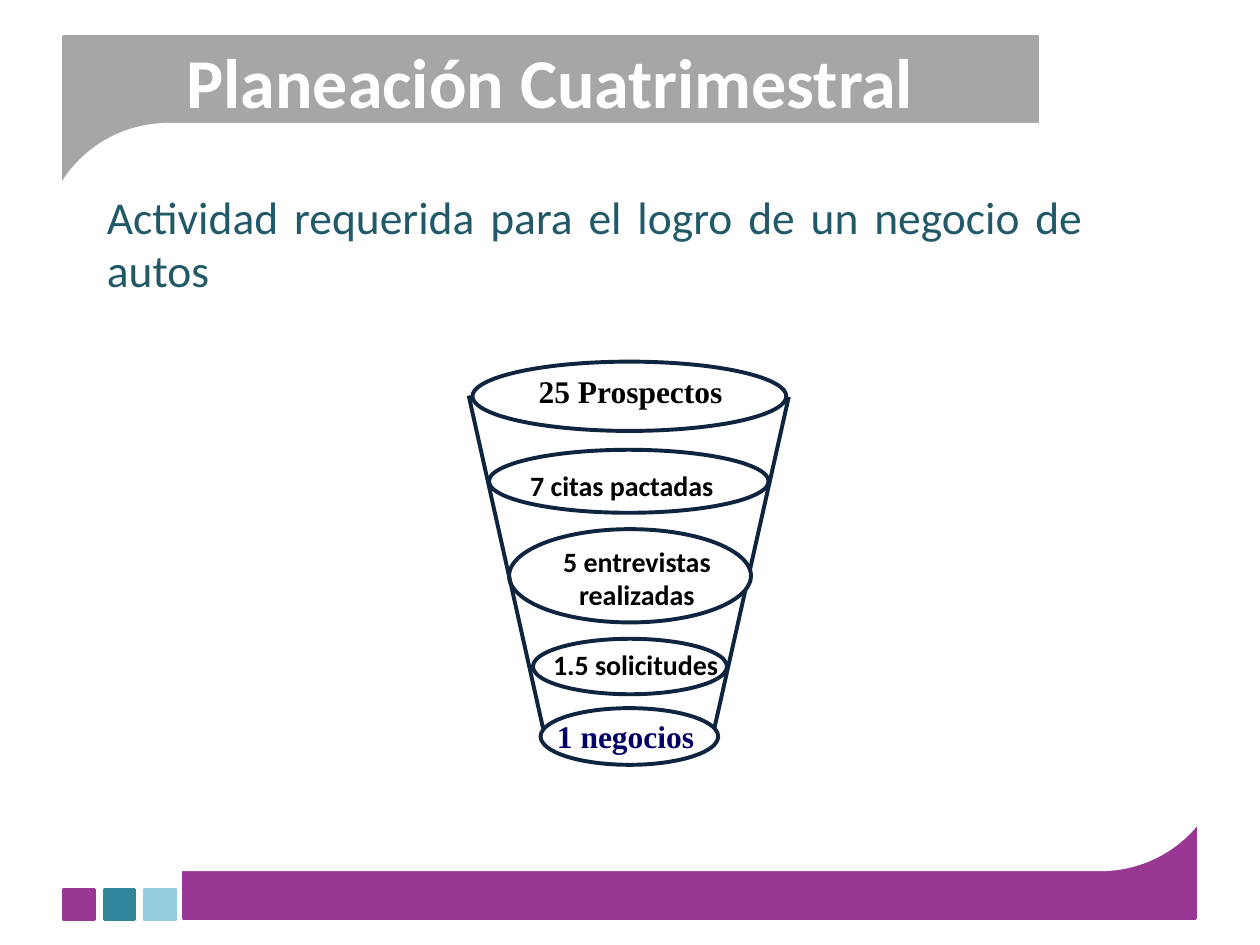
import pptx
import pptx.dml.color
import pptx.enum.shapes
import pptx.enum.text
import pptx.oxml
import pptx.util
from pptx.util import Inches

SHAPE = pptx.enum.shapes.MSO_SHAPE
ALIGN = pptx.enum.text.PP_ALIGN
ANCHOR = pptx.enum.text.MSO_ANCHOR
NAVY, PURPLE, GRAY, WHITE = "0F243E", "993794", "A6A6A6", "FFFFFF"
EFFECTS = ('<a:effectLst xmlns:a='
           '"http://schemas.openxmlformats.org/drawingml/2006/main"/>')


def color(value):
    return pptx.dml.color.RGBColor.from_string(value)


class SlideBuilder:
    def __init__(self, page, font="Calibri"):
        self.page = page
        self.font = font

    def shape(self, kind, left, top, width, height, fill, line=None, weight=2):
        shape = self.page.shapes.add_shape(
            kind, Inches(left), Inches(top), Inches(width), Inches(height))
        shape.shadow.inherit = False
        shape.fill.solid()
        shape.fill.fore_color.rgb = color(fill)
        shape.line.color.rgb = color(line or fill)
        shape.line.width = pptx.util.Pt(weight)
        return shape

    def ring(self, left, top, width, height):
        return self.shape(SHAPE.OVAL, left, top, width, height, WHITE, NAVY, 2.25)

    def line(self, x1, y1, x2, y2):
        line = self.page.shapes.add_connector(
            pptx.enum.shapes.MSO_CONNECTOR.STRAIGHT,
            Inches(x1), Inches(y1), Inches(x2), Inches(y2))
        line.line.color.rgb = color(NAVY)
        line.line.width = pptx.util.Pt(2.25)
        line._element.spPr.append(pptx.oxml.parse_xml(EFFECTS))

    def label(self, box, text, size, ink="000000", bold=True, align=ALIGN.LEFT,
              font=None, spacing=None, anchor=ANCHOR.TOP):
        frame = box.text_frame
        frame.word_wrap = True
        frame.vertical_anchor = anchor
        frame.text = text
        for para in frame.paragraphs:
            para.alignment = align
            if spacing:
                para.line_spacing = spacing
            for span in para.runs:
                span.font.name = font or self.font
                span.font.size = pptx.util.Pt(size)
                span.font.bold = bold
                span.font.color.rgb = color(ink)

    def text(self, left, top, width, height, text, size, inset=None, **style):
        box = self.page.shapes.add_textbox(
            Inches(left), Inches(top), Inches(width), Inches(height))
        frame = box.text_frame
        if inset is not None:
            frame.margin_left = frame.margin_right = Inches(inset)
            frame.margin_top = frame.margin_bottom = Inches(inset)
        self.label(box, text, size, **style)


def draw_background(builder):
    builder.shape(SHAPE.FLOWCHART_PROCESS, 0.51, 0.29, 7.72, 1.42, GRAY)
    builder.shape(SHAPE.RECTANGLE, 1.46, 6.03, 8.03, 1.26, PURPLE)
    for index, fill in enumerate((PURPLE, "31859C", "93CDDD")):
        builder.shape(SHAPE.RECTANGLE, 0.51 + 0.32 * index, 7.06, 0.24, 0.24, fill)
    builder.shape(SHAPE.ROUNDED_RECTANGLE, 0.35, 0.99, 9.37, 5.91, WHITE)


def draw_funnel(builder):
    serif = {"font": "Times New Roman", "spacing": 0.85}
    builder.line(6.26, 3.15, 5.67, 5.78)
    for ring in ((3.88, 3.57, 2.22, 0.5), (4.04, 4.2, 1.92, 0.74),
                 (4.23, 5.07, 1.54, 0.44), (4.29, 5.62, 1.41, 0.45)):
        builder.ring(*ring)
    builder.text(4.42, 5.74, 1.41, 0.45, "1 negocios", 18, inset=0,
                 ink="000066", **serif)
    builder.line(3.72, 3.14, 4.31, 5.78)

    top_ring = builder.ring(3.75, 2.87, 2.49, 0.55)
    top_ring.text_frame.margin_left = Inches(0.16)
    top_ring.text_frame.margin_right = Inches(0)
    builder.label(top_ring, "25 Prospectos", 18, **serif)

    builder.text(4.11, 3.67, 2.07, 0.37, "7 citas pactadas", 16)
    builder.text(4.2, 4.27, 1.71, 0.64, "5 entrevistas\nrealizadas", 16,
                 align=ALIGN.CENTER)
    builder.text(4.14, 5.09, 1.81, 0.37, "1.5 solicitudes", 16, align=ALIGN.CENTER)


def main():
    deck = pptx.Presentation()
    deck.slide_width, deck.slide_height = Inches(10), Inches(7.5)
    page = deck.slides.add_slide(deck.slide_layouts[6])
    builder = SlideBuilder(page)
    draw_background(builder)
    draw_funnel(builder)
    builder.text(0.75, 1.47, 7.95, 0.94,
                 "Actividad requerida para el logro de un negocio de autos", 26,
                 ink="215968", bold=False, align=ALIGN.JUSTIFY,
                 spacing=pptx.util.Pt(30))
    builder.text(0.5, 0.29, 7.73, 0.69, "Planeación Cuatrimestral", 40,
                 ink=WHITE, align=ALIGN.CENTER, anchor=ANCHOR.MIDDLE)
    deck.save("out.pptx")


if __name__ == "__main__":
    main()
